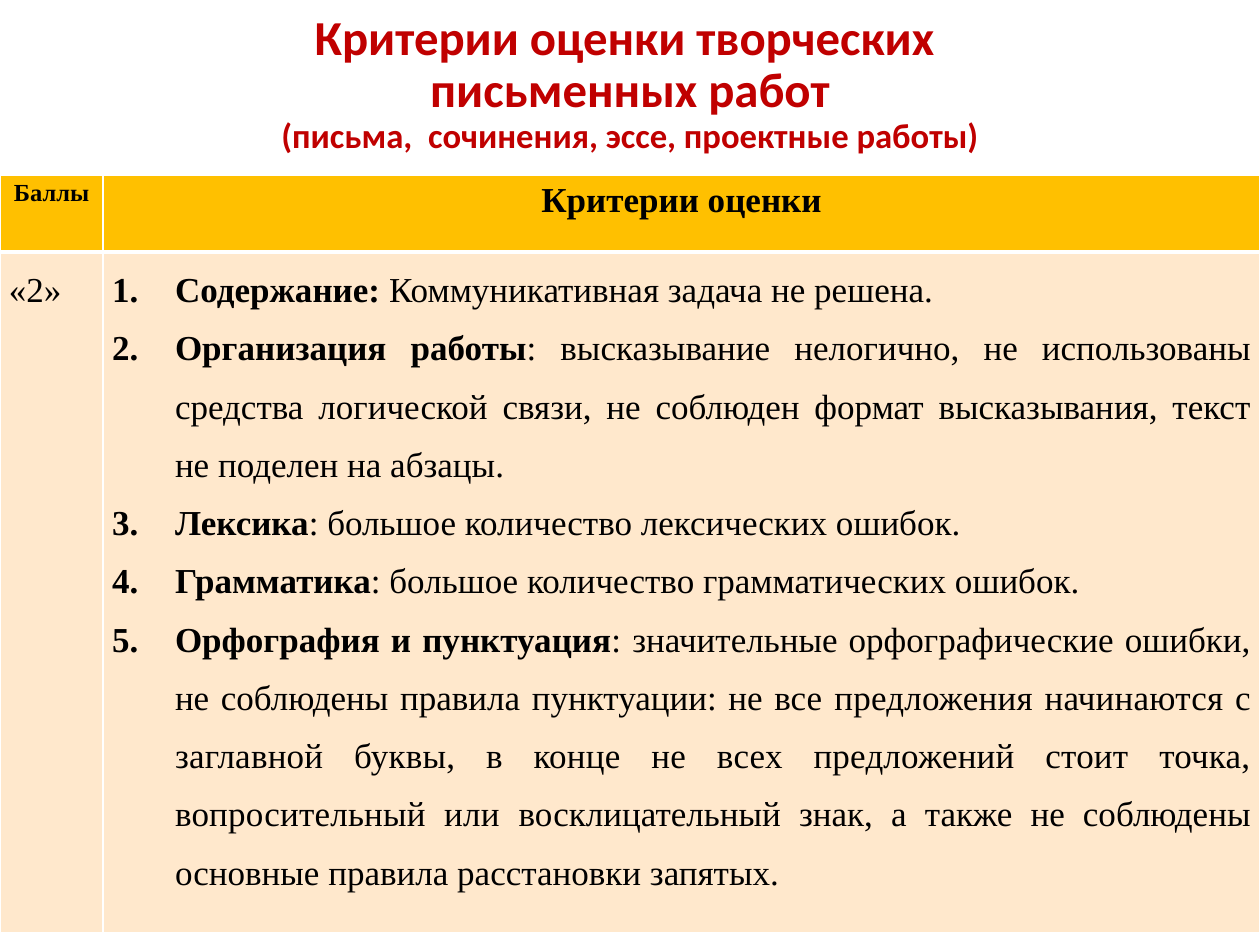
from lxml.etree import SubElement
from pptx import Presentation
from pptx.dml.color import RGBColor
from pptx.enum.text import MSO_ANCHOR, MSO_AUTO_SIZE, PP_ALIGN as Align
from pptx.oxml import parse_xml
from pptx.oxml.ns import nsdecls, qn
from pptx.util import Pt

COLORS = {"title": "C00000", "text": "000000", "header": "FFC000",
          "body": "FFE8CC", "border": "FFFFFF"}
SERIF = "Times New Roman"
TITLE = [("Критерии оценки творческих \vписьменных работ\v", 27.9),
         ("(письма,  сочинения, эссе, проектные работы)", 19.8)]
HEADERS = [("Баллы", 14), ("Критерии оценки", 20)]
GRADE = "«2»"
CRITERIA = [
    ("Содержание: ", ["Коммуникативная задача не решена."]),
    ("Организация работы", [
        ": высказывание нелогично, не использованы средства логической связи, "
        "не соблюден формат высказывания, текст не поделен на абзацы."]),
    ("Лексика", [": большое количество лексических ошибок."]),
    ("Грамматика", [": большое количество грамматических ошибок."]),
    ("Орфография и пунктуация", [
        ": значительные орфографические ошибки, не соблюдены правила "
        "пунктуации: не все ",
        "предложения начинаются с заглавной буквы, в конце не всех "
        "предложений стоит точка, вопросительный или ",
        "восклицательный знак, а также не соблюдены основные правила "
        "расстановки запятых."]),
]


def set_font(font, name, color, size=None, bold=None):
    """Apply typeface, colour, size and weight to a font."""
    font.name, font.size, font.bold = name, size, bold
    font.color.rgb = RGBColor.from_string(COLORS[color])


def add_run(paragraph, text, bold=None, size=None):
    """Append text, turning vertical tabs into line breaks."""
    for index, line in enumerate(text.split("\v")):
        if index:
            paragraph.add_line_break()
        if line:
            run = paragraph.add_run()
            run.text, run.font.bold, run.font.size = line, bold, size
    return run


def add_title(slide):
    """Fill and place the title placeholder."""
    heading = slide.shapes.title
    heading.left, heading.top = Pt(49.7), Pt(10.8)
    heading.width, heading.height = Pt(620.6), Pt(117.4)
    frame = heading.text_frame
    frame.word_wrap, frame.auto_size = True, MSO_AUTO_SIZE.NONE
    frame.vertical_anchor = MSO_ANCHOR.MIDDLE
    frame.margin_top, frame.margin_bottom = 0, Pt(42.5)
    paragraph = frame.paragraphs[0]
    paragraph.alignment, paragraph.line_spacing = Align.CENTER, 0.9
    set_font(paragraph.font, "Calibri", "title", bold=True)
    for text, size in TITLE:
        add_run(paragraph, text, size=Pt(size))


def style_cell(cell, fill, top, bottom):
    """Set margins, fill and border widths of a cell."""
    cell.margin_left = cell.margin_right = Pt(5.04)
    cell.margin_top = cell.margin_bottom = 0
    properties = cell._tc.get_or_add_tcPr()
    for side, width in (("L", 1), ("R", 1), ("T", top), ("B", bottom)):
        properties.append(parse_xml(
            f'<a:ln{side} {nsdecls("a")} w="{Pt(width)}"><a:solidFill>'
            f'<a:srgbClr val="{COLORS["border"]}"/></a:solidFill></a:ln{side}>'))
    cell.fill.solid()
    cell.fill.fore_color.rgb = RGBColor.from_string(COLORS[fill])


def format_paragraph(paragraph, align, spacing, size=20, bold=False, numbered=False):
    """Set layout, optional numbering and font of a table paragraph."""
    paragraph.alignment, paragraph.line_spacing = align, spacing
    if numbered:
        layout = paragraph._p.get_or_add_pPr()
        layout.set("marL", str(Pt(36)))
        layout.set("indent", str(-Pt(36)))
        SubElement(layout, qn("a:buFont"), typeface="+mj-lt")
        SubElement(layout, qn("a:buAutoNum"), type="arabicPeriod")
    set_font(paragraph.font, SERIF, "text", Pt(size), bold)


def add_criteria(frame):
    """Write the numbered criteria with bold names."""
    for index, (name, details) in enumerate(CRITERIA):
        paragraph = frame.add_paragraph() if index else frame.paragraphs[0]
        format_paragraph(paragraph, Align.JUSTIFY, 1.5, numbered=True)
        add_run(paragraph, name, bold=True)
        for part, detail in enumerate(details):
            run = add_run(paragraph, detail)
            if part == 1:
                run._r.get_or_add_rPr().set("spc", "10")


def add_criteria_table(slide):
    """Build the table of grades and criteria."""
    table = slide.shapes.add_table(2, 2, 0, Pt(100.1), Pt(720), Pt(432.7)).table
    for column, width in zip(table.columns, (59, 661)):
        column.width = Pt(width)
    for row, height in zip(table.rows, (43.9, 388.8)):
        row.height = Pt(height)
    for column, (label, size) in enumerate(HEADERS):
        style_cell(table.cell(0, column), "header", 1, 3)
        style_cell(table.cell(1, column), "body", 3, 1)
        paragraph = table.cell(0, column).text_frame.paragraphs[0]
        format_paragraph(paragraph, Align.CENTER, 1.15, size, bold=True)
        add_run(paragraph, label)
    grade = table.cell(1, 0).text_frame.paragraphs[0]
    format_paragraph(grade, Align.JUSTIFY, 1.5)
    add_run(grade, GRADE)
    add_criteria(table.cell(1, 1).text_frame)


def main():
    """Build and save the slide."""
    deck = Presentation()
    deck.slide_width, deck.slide_height = Pt(720), Pt(540)
    slide = deck.slides.add_slide(deck.slide_layouts[5])
    add_title(slide)
    add_criteria_table(slide)
    deck.save("out.pptx")


if __name__ == "__main__":
    main()
